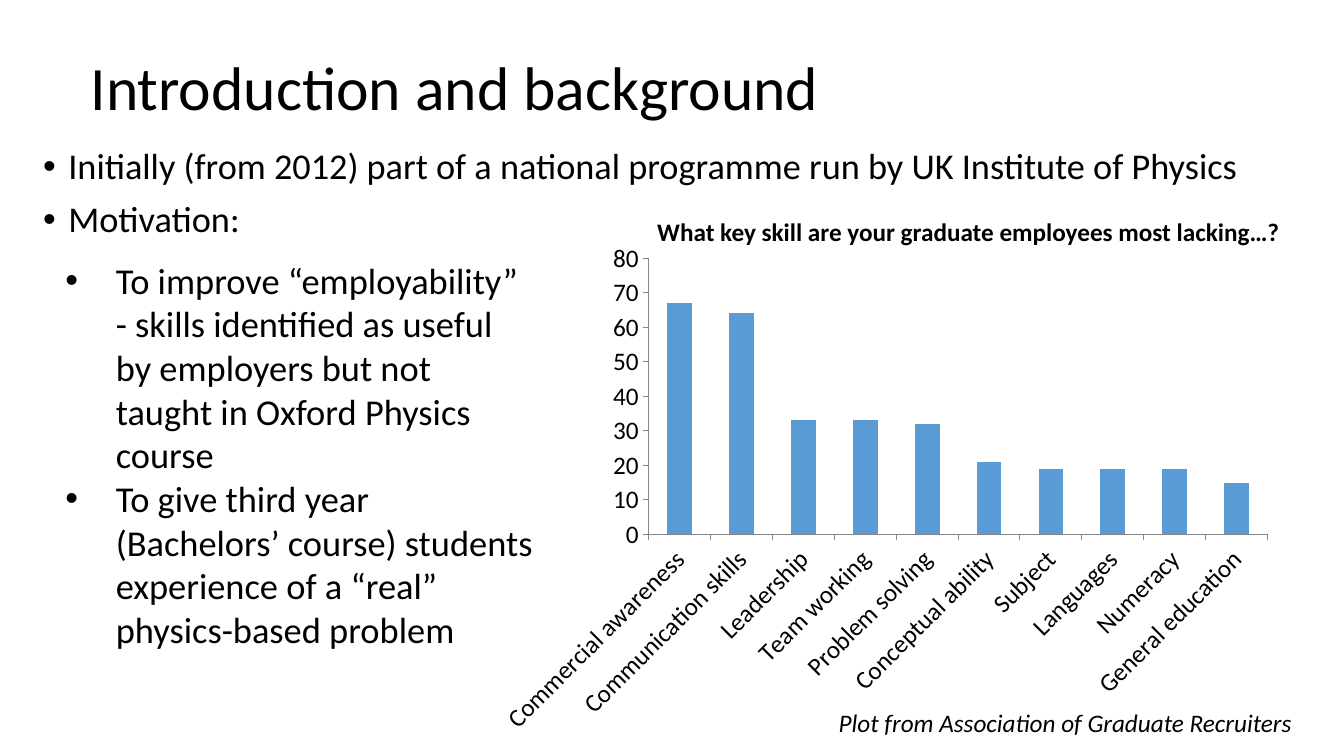
from lxml import etree
from pptx import Presentation
from pptx.chart import data
from pptx.dml.color import RGBColor
from pptx.enum import chart as ch, text as tx
from pptx.oxml import ns
from pptx.util import Inches, Pt

FONT = "Calibri"
BLACK = "000000"
SKILLS = {
    "Commercial awareness": 67,
    "Communication skills": 64,
    "Leadership": 33,
    "Team working": 33,
    "Problem solving": 32,
    "Conceptual ability": 21,
    "Subject": 19,
    "Languages": 19,
    "Numeracy": 19,
    "General education": 15,
}


def colour(hex_value):
    """Turn a hex string into a colour."""
    return RGBColor.from_string(hex_value)


def style_font(font, size, bold=False, italic=False):
    """Apply the slide's typeface and colour to a font."""
    font.name = FONT
    font.size = Pt(size)
    font.bold = bold
    font.italic = italic
    font.color.rgb = colour(BLACK)


def add_bullet(paragraph, indent):
    """Give a paragraph a round bullet with a hanging indent."""
    properties = paragraph._p.get_or_add_pPr()
    properties.set("marL", str(Inches(indent)))
    properties.set("indent", str(-Inches(indent)))
    etree.SubElement(properties, ns.qn("a:buFont")).set("typeface", "Arial")
    etree.SubElement(properties, ns.qn("a:buChar")).set("char", "•")


def add_text(slide, box, *lines, size=18, bold=False, italic=False, indent=0,
             spacing=1.0, before=0, anchor=tx.MSO_ANCHOR.TOP):
    """Add a text box with one paragraph per line."""
    frame = slide.shapes.add_textbox(*map(Inches, box)).text_frame
    frame.word_wrap = True
    frame.vertical_anchor = anchor
    for index, line in enumerate(lines):
        paragraph = frame.add_paragraph() if index else frame.paragraphs[0]
        paragraph.text = line
        paragraph.line_spacing = spacing
        paragraph.space_before = Pt(before if index else 0)
        if indent:
            add_bullet(paragraph, indent)
        style_font(paragraph.font, size, bold, italic)


def style_axis(axis):
    """Give an axis a thin grey line, outer ticks and no gridlines."""
    axis.has_major_gridlines = False
    axis.major_tick_mark = ch.XL_TICK_MARK.OUTSIDE
    axis.minor_tick_mark = ch.XL_TICK_MARK.NONE
    axis.format.line.color.rgb = colour("868686")
    axis.format.line.width = Pt(0.75)
    style_font(axis.tick_labels.font, 18)


def add_skills_chart(slide, box):
    """Add the column chart of lacking skills."""
    chart_data = data.CategoryChartData()
    chart_data.categories = list(SKILLS)
    chart_data.add_series("Series 1", list(SKILLS.values()))
    chart = slide.shapes.add_chart(
        ch.XL_CHART_TYPE.COLUMN_CLUSTERED, *map(Inches, box), chart_data).chart
    chart.has_title = False
    chart.has_legend = False
    style_font(chart.font, 18)
    for axis in (chart.category_axis, chart.value_axis):
        style_axis(axis)
    chart.value_axis.minimum_scale = 0
    chart.value_axis.maximum_scale = 80
    chart.value_axis.major_unit = 10
    label_body = chart.category_axis._element.find(
        f"{ns.qn('c:txPr')}/{ns.qn('a:bodyPr')}")
    label_body.set("rot", str(-45 * 60000))
    plot = chart.plots[0]
    plot.gap_width = 150
    plot.vary_by_categories = False
    columns = plot.series[0].format.fill
    columns.solid()
    columns.fore_color.rgb = colour("5B9BD5")


def main():
    """Build the introduction slide."""
    deck = Presentation()
    deck.slide_width = Inches(13.33)
    deck.slide_height = Inches(7.5)
    slide = deck.slides.add_slide(deck.slide_layouts[6])
    add_text(slide, (0.8, 0.17, 11.5, 1.45), "Introduction and background",
             size=44, spacing=0.9, anchor=tx.MSO_ANCHOR.MIDDLE)
    add_text(slide, (0.33, 1.42, 12.4, 1.18),
             "Initially (from 2012) part of a national programme run by "
             "UK Institute of Physics",
             "Motivation:",
             size=25.9, indent=0.25, spacing=0.9, before=10)
    add_skills_chart(slide, (4.81, 2.31, 7.92, 5.07))
    add_text(slide, (0.55, 2.51, 4.85, 4.04),
             "To improve “employability” - skills identified as useful by "
             "employers but not taught in Oxford Physics course",
             "To give third year (Bachelors’ course) students experience of a "
             "“real” physics-based problem",
             size=26, indent=0.5)
    add_text(slide, (6.42, 2.1, 6.88, 0.4),
             "What key skill are your graduate employees most lacking…?",
             bold=True)
    add_text(slide, (8.22, 6.97, 5.08, 0.4),
             "Plot from Association of Graduate Recruiters", italic=True)
    deck.save("out.pptx")


if __name__ == "__main__":
    main()
